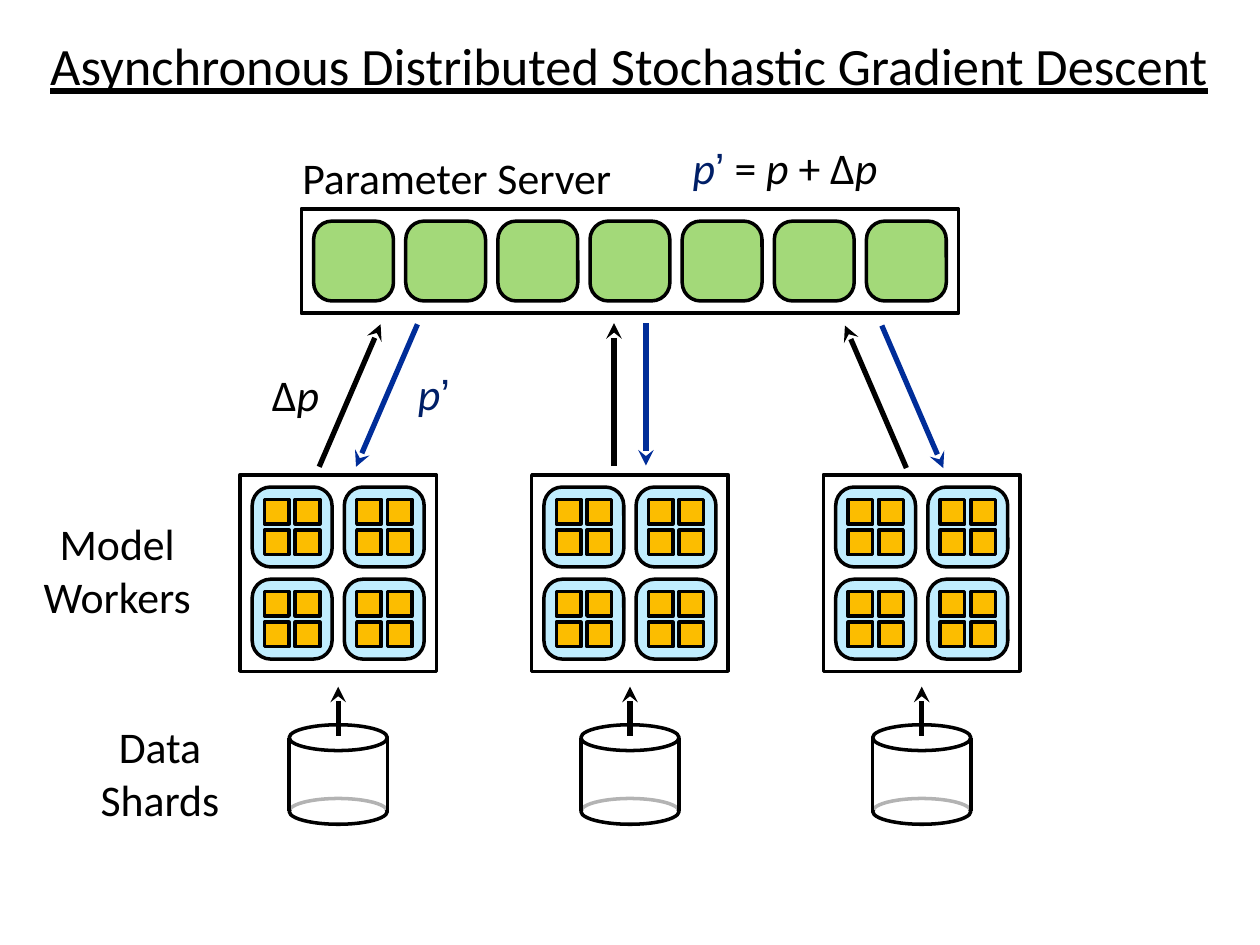
from dataclasses import dataclass

from pptx import Presentation
from pptx.dml.color import RGBColor
from pptx.enum.shapes import MSO_CONNECTOR, MSO_SHAPE
from pptx.enum.text import MSO_ANCHOR, MSO_AUTO_SIZE, PP_ALIGN
from pptx.oxml.ns import qn
from pptx.oxml.xmlchemy import OxmlElement
from pptx.util import Inches, Pt

RECTANGLE = MSO_SHAPE.RECTANGLE
ROUNDED = MSO_SHAPE.ROUNDED_RECTANGLE
OVAL = MSO_SHAPE.OVAL
STRAIGHT = MSO_CONNECTOR.STRAIGHT
MIDDLE = MSO_ANCHOR.MIDDLE
FIXED_SIZE = MSO_AUTO_SIZE.NONE
FIT_SHAPE = MSO_AUTO_SIZE.SHAPE_TO_FIT_TEXT
CENTER = PP_ALIGN.CENTER
LEFT = PP_ALIGN.LEFT

SLIDE_WIDTH = Inches(10)
SLIDE_HEIGHT = Inches(7.5)
TITLE_ONLY = 5

WORKER = 16
UNIT = Inches(1.56) / WORKER
TILE, TILE_PITCH = 6.5, 7.5
CORE, CORE_PITCH = 2, 2.5
SERVER_TILES = 7
SERVER_TOP = 17
WORKER_TOP = 38.65
WORKER_PITCH = 23.75
SHARD_TOP = 59
SHARD_WIDTH = 8
RIM_HEIGHT = 2.1
SHARD_DEPTH = 6
EXCHANGE_LENGTH = 11.6


@dataclass(frozen=True)
class Theme:
    black: str = "000000"
    white: str = "FFFFFF"
    server: str = "A3D979"
    worker: str = "C0EDFE"
    core: str = "FCBD00"
    reply: str = "002D99"
    variable: str = "001F67"
    font: str = "Calibri"
    prime_font: str = "Arial"
    title_size: int = 30
    label_size: int = 25
    outline: int = 2
    arrow: int = 3


THEME = Theme()
PRIME_RUNS = [
    ("p", {"color": THEME.variable, "italic": True}),
    ("’", {"color": THEME.variable, "font": THEME.prime_font}),
]
VARIABLE_RUN = ("p", {"italic": True})


def color(value):
    return RGBColor.from_string(value)


def across(units):
    return round(SLIDE_WIDTH / 2 + units * UNIT)


def down(units):
    return round(units * UNIT)


def add_box(shapes, kind, left, top, width, height, fill=None, outlined=True, opacity=None):
    shape = shapes.add_shape(kind, across(left), down(top), down(width), down(height))
    shape.shadow.inherit = False
    if kind == ROUNDED:
        shape.adjustments[0] = 0.23
    if fill:
        shape.fill.solid()
        shape.fill.fore_color.rgb = color(fill)
    else:
        shape.fill.background()
    if opacity:
        alpha = OxmlElement("a:alpha")
        alpha.set("val", str(opacity * 1000))
        shape.fill._xPr.find(".//" + qn("a:srgbClr")).append(alpha)
    if outlined:
        shape.line.color.rgb = color(THEME.black)
        shape.line.width = Pt(THEME.outline)
    else:
        shape.line.fill.background()


def add_line(shapes, start, end, line_color=THEME.black, width=THEME.outline, arrow=False):
    connector = shapes.add_connector(
        STRAIGHT, across(start[0]), down(start[1]), across(end[0]), down(end[1]))
    connector.line.color.rgb = color(line_color)
    connector.line.width = Pt(width)
    properties = connector._element.spPr
    if arrow:
        tail = OxmlElement("a:tailEnd")
        tail.set("type", "stealth")
        properties.find(qn("a:ln")).append(tail)
    properties.append(OxmlElement("a:effectLst"))


def add_arrow(shapes, start, end, line_color=THEME.black):
    add_line(shapes, start, end, line_color, THEME.arrow, arrow=True)


def write_text(shape, paragraphs, size=THEME.label_size, align=CENTER, wrap=True, underline=None):
    frame = shape.text_frame
    frame.margin_left = frame.margin_right = frame.margin_top = frame.margin_bottom = 0
    frame.vertical_anchor = MIDDLE
    frame.word_wrap = wrap
    frame.auto_size = FIXED_SIZE if wrap else FIT_SHAPE
    for index, runs in enumerate(paragraphs):
        paragraph = frame.add_paragraph() if index else frame.paragraphs[0]
        paragraph.alignment = align
        for text, style in runs:
            run = paragraph.add_run()
            run.text = text
            run.font.size = Pt(size)
            run.font.name = style.get("font", THEME.font)
            run.font.color.rgb = color(style.get("color", THEME.black))
            run.font.italic = style.get("italic", False)
            run.font.underline = underline


def percent_area(left, top, width, height):
    return [round(share * side / 100) for share, side in
            zip((left, top, width, height), (SLIDE_WIDTH, SLIDE_HEIGHT) * 2)]


def add_label(slide, area, paragraphs, **text_format):
    write_text(slide.shapes.add_textbox(*percent_area(*area)), paragraphs, **text_format)


def add_title(slide, text):
    title = slide.shapes.title
    title.left, title.top, title.width, title.height = percent_area(0.7, 3.1, 98.5, 7.5)
    write_text(title, [[(text, {})]], size=THEME.title_size, underline=True)


def add_worker(shapes, center):
    left = center - WORKER / 2
    for row in range(2):
        for column in range(2):
            tile_left = left + 1 + column * TILE_PITCH
            tile_top = WORKER_TOP + 1 + row * TILE_PITCH
            add_box(shapes, ROUNDED, tile_left, tile_top, TILE, TILE, THEME.worker)
            for core_row in range(2):
                for core_column in range(2):
                    add_box(shapes, RECTANGLE, tile_left + 1 + core_column * CORE_PITCH,
                            tile_top + 1 + core_row * CORE_PITCH, CORE, CORE, THEME.core)
    add_box(shapes, RECTANGLE, left, WORKER_TOP, WORKER, WORKER)


def add_shard(shapes, center):
    left = center - SHARD_WIDTH / 2
    middle = SHARD_TOP + RIM_HEIGHT / 2
    add_box(shapes, OVAL, left, SHARD_TOP + SHARD_DEPTH, SHARD_WIDTH, RIM_HEIGHT)
    add_box(shapes, RECTANGLE, left, middle + 0.2, SHARD_WIDTH, 5.7,
            THEME.white, outlined=False, opacity=70)
    add_box(shapes, OVAL, left, SHARD_TOP, SHARD_WIDTH, RIM_HEIGHT)
    for side in (left, left + SHARD_WIDTH):
        add_line(shapes, (side, middle), (side, middle + SHARD_DEPTH))
    add_arrow(shapes, (center, SHARD_TOP + 0.9), (center, SHARD_TOP - 3.1))


def add_server(shapes):
    width = SERVER_TILES * TILE_PITCH + 1
    left = -width / 2
    add_box(shapes, RECTANGLE, left, SERVER_TOP, width, TILE + 2)
    for index in range(SERVER_TILES):
        add_box(shapes, ROUNDED, left + 1 + index * TILE_PITCH, SERVER_TOP + 1,
                TILE, TILE, THEME.server)


def add_exchange(shapes, worker_end, server_end, top, offset):
    bottom = top + EXCHANGE_LENGTH
    add_arrow(shapes, (worker_end - offset, bottom), (server_end - offset, top))
    add_arrow(shapes, (server_end + offset, top), (worker_end + offset, bottom), THEME.reply)


def main():
    presentation = Presentation()
    presentation.slide_width = SLIDE_WIDTH
    presentation.slide_height = SLIDE_HEIGHT
    slide = presentation.slides.add_slide(presentation.slide_layouts[TITLE_ONLY])
    add_title(slide, "Asynchronous Distributed Stochastic Gradient Descent")
    for position in (-1, 0, 1):
        group = slide.shapes.add_group_shape()
        add_worker(group.shapes, position * WORKER_PITCH)
        add_shard(group.shapes, position * WORKER_PITCH)
    add_server(slide.shapes.add_group_shape().shapes)
    add_exchange(slide.shapes, -23.8, -18.8, 26.4, 1.5)
    add_exchange(slide.shapes, 0, 0, 26.3, 1.3)
    add_exchange(slide.shapes, 24, 19, 26.5, 1.5)
    add_label(slide, (24, 15.9, 28, 5.7), [[("Parameter Server", {})]], align=LEFT, wrap=False)
    add_label(slide, (1.4, 54.4, 15.8, 11.7), [[("Model", {})], [("Workers", {})]])
    add_label(slide, (7.1, 76.1, 11.2, 11.3), [[("Data", {})], [("Shards", {})]], wrap=False)
    add_label(slide, (51.1, 14.3, 22.4, 6.8),
              [PRIME_RUNS + [(" = ", {}), VARIABLE_RUN, (" + ∆", {}), VARIABLE_RUN]])
    add_label(slide, (19.4, 38.3, 8.1, 6.8), [[("∆", {}), VARIABLE_RUN]])
    add_label(slide, (30.4, 38.3, 8.1, 6.5), [PRIME_RUNS])
    presentation.save("out.pptx")


if __name__ == "__main__":
    main()
